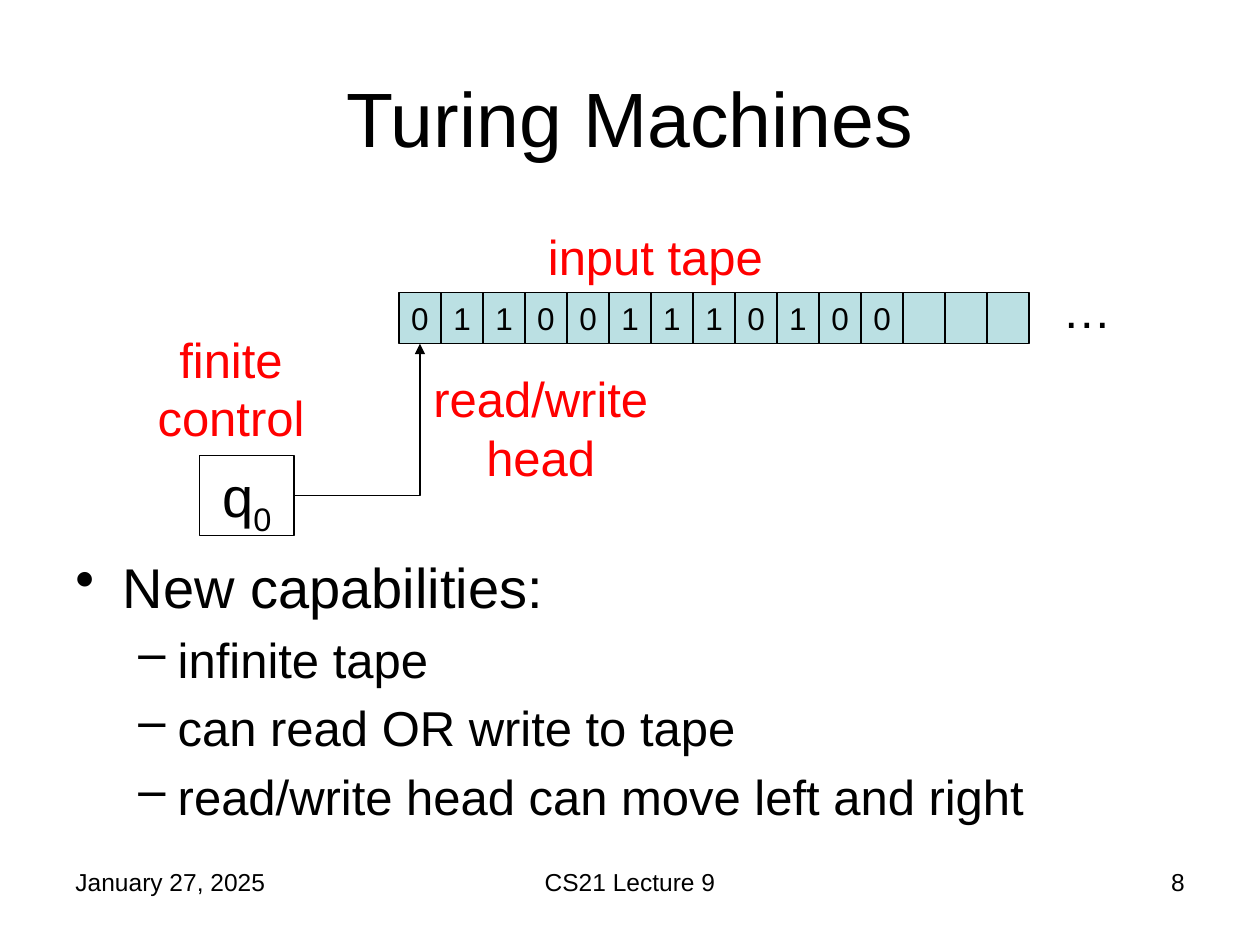
from lxml.etree import SubElement
from pptx import Presentation
from pptx.dml.color import RGBColor
from pptx.enum.shapes import MSO_CONNECTOR, MSO_SHAPE
from pptx.enum.text import MSO_ANCHOR, PP_ALIGN
from pptx.oxml.ns import qn
from pptx.util import Pt

PX = 9525  # 96 px to the inch
FONT = "Arial"
COLORS = {"text": "000000", "label": "FF0000", "tape": "BBE0E3", "line": "000000"}
LEFT, CENTER, RIGHT = PP_ALIGN.LEFT, PP_ALIGN.CENTER, PP_ALIGN.RIGHT
TAPE = "011001110100"
CELL_COUNT = 15
CELL_W, CELL_H = 32, 39


def px(*lengths):
    return [n * PX for n in lengths]


def rgb(name):
    return RGBColor.from_string(COLORS[name])


def style(p, size, align=LEFT, color="text"):
    p.alignment = align
    p.font.name = FONT
    p.font.size = Pt(size)
    p.font.color.rgb = rgb(color)


def add_text(s, box, text, size, align=LEFT, color="text", anchor=MSO_ANCHOR.TOP):
    tf = s.shapes.add_textbox(*px(*box)).text_frame
    tf.word_wrap = True
    tf.vertical_anchor = anchor
    tf.text = text
    style(tf.paragraphs[0], size, align, color)


def add_box(s, box, text, size, fill=None):
    sp = s.shapes.add_shape(MSO_SHAPE.RECTANGLE, *px(*box))
    sp.shadow.inherit = False
    if fill:
        sp.fill.solid()
        sp.fill.fore_color.rgb = rgb(fill)
    else:
        sp.fill.background()
    sp.line.color.rgb = rgb("line")
    sp.line.width = Pt(0.75)
    tf = sp.text_frame
    tf.margin_left = tf.margin_right = 0
    tf.vertical_anchor = MSO_ANCHOR.TOP
    tf.text = text
    style(tf.paragraphs[0], size, CENTER)
    return sp


def add_tape(s, left, top):
    """Draw the row of cells and return the first one."""
    cells = [add_box(s, (left + i * CELL_W, top, CELL_W, CELL_H), symbol, 18, "tape")
             for i, symbol in enumerate(TAPE.ljust(CELL_COUNT))
             if symbol.strip()]
    for i in range(len(TAPE), CELL_COUNT):
        add_box(s, (left + i * CELL_W, top, CELL_W, CELL_H), "", 18, "tape")
    return cells[0]


def add_state(s, box, name, index):
    sp = add_box(s, box, name, 32)
    r = sp.text_frame.paragraphs[0].add_run()
    r.text = index
    r.font._element.set("baseline", "-25000")
    return sp


def add_head(s, state, cell):
    """Join the state to the cell above with a single-bend arrow."""
    cx = s.shapes.add_connector(MSO_CONNECTOR.ELBOW, 0, 0, 0, 0)
    cx.begin_connect(state, 3)
    cx.end_connect(cell, 2)
    cx.line.color.rgb = rgb("line")
    cx.line.width = Pt(0.75)
    sp_pr = cx._element.spPr
    sp_pr.find(qn("a:prstGeom")).set("prst", "bentConnector2")
    SubElement(sp_pr.find(qn("a:ln")), qn("a:tailEnd"), type="triangle")
    SubElement(sp_pr, qn("a:effectLst"))


def add_bullets(s, box, items):
    """Write (level, text) items as a two-level list."""
    levels = [(32, "•", 36, 36), (28, "–", 78, 30)]  # size, bullet, margin, hang
    tf = s.shapes.add_textbox(*px(*box)).text_frame
    tf.word_wrap = True
    for i, (level, text) in enumerate(items):
        size, bullet, margin, hang = levels[level]
        p = tf.add_paragraph() if i else tf.paragraphs[0]
        p.text = text
        p.level = level
        style(p, size)
        p.space_before = Pt(size * 0.2)
        p_pr = p._p.get_or_add_pPr()
        p_pr.set("marL", str(margin * PX))
        p_pr.set("indent", str(-hang * PX))
        bu = p_pr.makeelement(qn("a:buChar"), {"char": bullet})
        p_pr.find(qn("a:defRPr")).addprevious(bu)


def main():
    prs = Presentation()
    prs.slide_width, prs.slide_height = px(960, 720)
    s = prs.slides.add_slide(prs.slide_layouts[6])

    add_text(s, (48, 29, 864, 120), "Turing Machines", 44, CENTER,
             anchor=MSO_ANCHOR.MIDDLE)
    add_bullets(s, (48, 416, 864, 264), [
        (0, "New capabilities:"),
        (1, "infinite tape"),
        (1, "can read OR write to tape"),
        (1, "read/write head can move left and right"),
    ])

    first_cell = add_tape(s, 304, 223)
    state = add_state(s, (152, 347, 72, 61), "q", "0")
    add_head(s, state, first_cell)
    add_text(s, (800, 208, 72, 55), "…", 28)
    for box, text, align in [
        ((408, 168, 224, 55), "input tape", LEFT),
        ((88, 246, 176, 99), "finite control", CENTER),
        ((312, 276, 200, 99), "read/write head", CENTER),
    ]:
        add_text(s, box, text, 28, align, "label")

    for left, width, text, align in [
        (48, 224, "January 27, 2025", LEFT),
        (328, 304, "CS21 Lecture 9", CENTER),
        (688, 224, "8", RIGHT),
    ]:
        add_text(s, (left, 656, width, 50), text, 14, align)
    prs.save("out.pptx")


if __name__ == "__main__":
    main()
